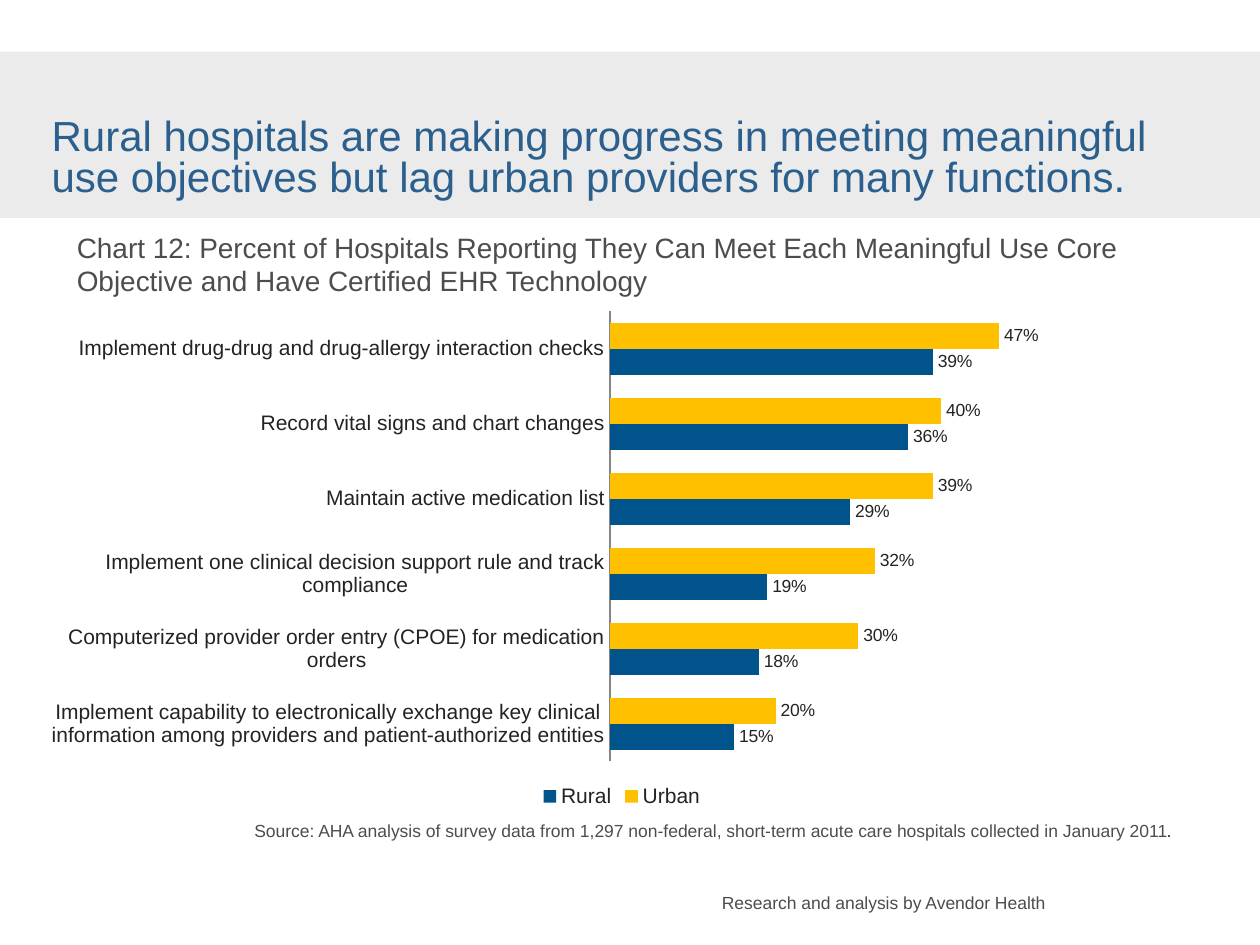
from dataclasses import dataclass

import pptx
import pptx.chart.data
import pptx.dml.color
import pptx.enum.chart
import pptx.enum.shapes
import pptx.enum.text
import pptx.oxml
import pptx.oxml.ns
import pptx.util
from pptx.util import Inches


@dataclass(frozen=True)
class Theme:
    font: str = "Arial"
    band: str = "EBEBEB"
    headline: str = "2B608E"
    body: str = "4D4D4D"
    ink: str = "232323"
    axis: str = "868686"
    grid: str = "FFFFFF"
    urban: str = "FFC000"
    rural: str = "00548B"
    headline_size: int = 24
    caption_size: int = 16
    chart_size: int = 12
    small_size: int = 10


THEME = Theme()

OBJECTIVES = [
    ("Implement drug-drug and drug-allergy interaction checks", 0.47, 0.39),
    ("Record vital signs and chart changes", 0.40, 0.36),
    ("Maintain active medication list", 0.39, 0.29),
    ("Implement one clinical decision support rule and track compliance", 0.32, 0.19),
    ("Computerized provider order entry (CPOE) for medication orders", 0.30, 0.18),
    ("Implement capability to electronically exchange key clinical information "
     "among providers and patient-authorized entities", 0.20, 0.15),
]


def rgb(color):
    return pptx.dml.color.RGBColor.from_string(color)


def style_font(font, size, color):
    font.name = THEME.font
    font.size = pptx.util.Pt(size)
    font.color.rgb = rgb(color)


def fill_text(frame, text, size, color, inset=True):
    frame.word_wrap = True
    frame.auto_size = pptx.enum.text.MSO_AUTO_SIZE.NONE
    if not inset:
        frame.margin_left = frame.margin_right = 0
        frame.margin_top = frame.margin_bottom = 0
    frame.text = text
    paragraph = frame.paragraphs[0]
    paragraph.alignment = pptx.enum.text.PP_ALIGN.LEFT
    style_font(paragraph.runs[0].font, size, color)
    return paragraph


def add_headline_band(slide, box):
    band = slide.shapes.add_shape(pptx.enum.shapes.MSO_SHAPE.RECTANGLE, *box)
    band.shadow.inherit = False
    band.fill.solid()
    band.fill.fore_color.rgb = rgb(THEME.band)
    band.line.fill.background()

    left, top, width, height = box
    headline = slide.shapes.add_textbox(
        left + Inches(0.41), top + Inches(0.54), width - Inches(1), Inches(0.65))
    paragraph = fill_text(
        headline.text_frame,
        "Rural hospitals are making progress in meeting meaningful use objectives "
        "but lag urban providers for many functions.",
        THEME.headline_size, THEME.headline, inset=False)
    paragraph.line_spacing = 0.8


def place_caption(slide, box):
    caption = slide.shapes.title
    caption.left, caption.top, caption.width, caption.height = box
    fill_text(
        caption.text_frame,
        "Chart 12: Percent of Hospitals Reporting They Can Meet Each Meaningful Use "
        "Core Objective and Have Certified EHR Technology",
        THEME.caption_size, THEME.body)
    caption.text_frame.vertical_anchor = pptx.enum.text.MSO_ANCHOR.BOTTOM


def set_plot_layout(chart, **fractions):
    plot_area = chart.plots[0]._element.getparent()
    for stale in plot_area.findall(pptx.oxml.ns.qn("c:layout")):
        plot_area.remove(stale)
    places = "".join(f'<c:{key} val="{value}"/>' for key, value in fractions.items())
    plot_area.insert(0, pptx.oxml.parse_xml(
        f'<c:layout {pptx.oxml.ns.nsdecls("c")}><c:manualLayout>'
        '<c:layoutTarget val="inner"/><c:xMode val="edge"/><c:yMode val="edge"/>'
        f'{places}</c:manualLayout></c:layout>'))


def style_axes(chart):
    enums = pptx.enum.chart
    objective_axis = chart.category_axis
    objective_axis.reverse_order = True
    objective_axis.major_tick_mark = enums.XL_TICK_MARK.NONE
    objective_axis.has_major_gridlines = False
    objective_axis.format.line.color.rgb = rgb(THEME.axis)
    style_font(objective_axis.tick_labels.font, THEME.chart_size, THEME.ink)

    percent_axis = chart.value_axis
    percent_axis.minimum_scale = 0
    percent_axis.maximum_scale = 0.7
    percent_axis.major_unit = 0.1
    percent_axis.major_tick_mark = enums.XL_TICK_MARK.NONE
    percent_axis.tick_label_position = enums.XL_TICK_LABEL_POSITION.NONE
    percent_axis.format.line.fill.background()
    gridline = percent_axis.major_gridlines.format.line
    gridline.color.rgb = rgb(THEME.grid)
    gridline.width = pptx.util.Pt(0.75)


def add_objectives_chart(slide, box):
    enums = pptx.enum.chart
    names, urban, rural = zip(*OBJECTIVES)
    data = pptx.chart.data.CategoryChartData(number_format="0%")
    data.categories = names
    data.add_series("Urban", urban)
    data.add_series("Rural", rural)
    chart = slide.shapes.add_chart(
        enums.XL_CHART_TYPE.BAR_CLUSTERED, *box, data).chart
    chart.has_title = False
    style_font(chart.font, THEME.chart_size, THEME.ink)
    style_axes(chart)
    set_plot_layout(chart, x=0.49, y=0.02, w=0.49, h=0.88)

    chart.has_legend = True
    chart.legend.position = enums.XL_LEGEND_POSITION.BOTTOM
    chart.legend.include_in_layout = False
    style_font(chart.legend.font, THEME.chart_size, THEME.ink)

    bars = chart.plots[0]
    bars.vary_by_categories = False
    bars.gap_width = 87
    bars.overlap = 0
    for series, color in zip(bars.series, (THEME.urban, THEME.rural)):
        series.invert_if_negative = False
        series.format.fill.solid()
        series.format.fill.fore_color.rgb = rgb(color)
        labels = series.data_labels
        labels.show_value = True
        labels.number_format = "0%"
        labels.number_format_is_linked = False
        labels.position = enums.XL_LABEL_POSITION.OUTSIDE_END
        style_font(labels.font, THEME.small_size, THEME.ink)


def add_source(slide, box):
    source = slide.shapes.add_textbox(*box)
    paragraph = fill_text(
        source.text_frame,
        "Source: AHA analysis of survey data from 1,297 non-federal, short-term "
        "acute care hospitals collected in January 2011",
        THEME.small_size, THEME.body)
    full_stop = paragraph.add_run()
    full_stop.text = "."
    style_font(full_stop.font, THEME.small_size, THEME.ink)


def add_credit(slide, box):
    credit = slide.shapes.add_textbox(*box)
    fill_text(credit.text_frame, "Research and analysis by Avendor Health",
              THEME.small_size, THEME.body, inset=False)


def inches_box(*lengths):
    return tuple(Inches(length) for length in lengths)


def main():
    deck = pptx.Presentation()
    deck.slide_width, deck.slide_height = Inches(10), Inches(7.5)
    slide = deck.slides.add_slide(deck.slide_layouts[5])
    add_headline_band(slide, inches_box(0, 0.41, 10, 1.32))
    add_credit(slide, inches_box(5.73, 7.08, 2.64, 0.17))
    place_caption(slide, inches_box(0.51, 1.47, 8.88, 0.94))
    add_objectives_chart(slide, inches_box(0.24, 2.39, 9.39, 4.06))
    add_source(slide, inches_box(1.92, 6.46, 7.76, 0.67))
    deck.save("out.pptx")


if __name__ == "__main__":
    main()
